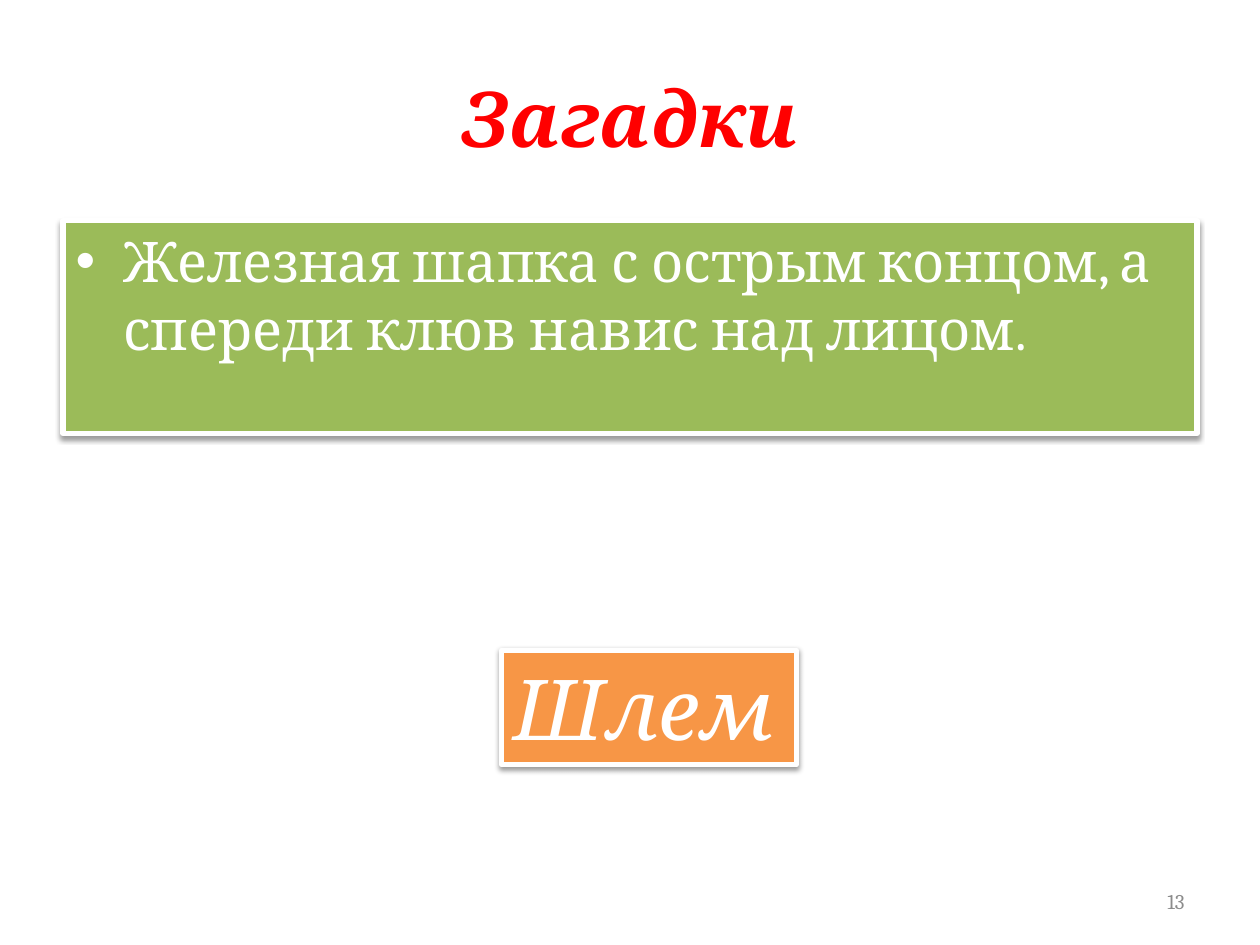
import pptx
import pptx.dml.color
import pptx.enum.text
import pptx.oxml
import pptx.oxml.ns
import pptx.util
import lxml.etree

ALIGN = pptx.enum.text.PP_ALIGN
ANCHOR = pptx.enum.text.MSO_ANCHOR
SHADOW = (
    '<a:effectLst xmlns:a="http://schemas.openxmlformats.org/drawingml/2006/main">'
    '<a:outerShdw blurRad="39370" dist="20320" dir="5400000" rotWithShape="0">'
    '<a:srgbClr val="000000"><a:alpha val="38000"/></a:srgbClr>'
    '</a:outerShdw></a:effectLst>'
)


def color(value):
    return pptx.dml.color.RGBColor.from_string(value)


class RiddleSlide:
    font_name = "Cambria"
    white = "FFFFFF"

    def __init__(self, deck):
        self.deck = deck
        self.page = deck.slides.add_slide(deck.slide_layouts[1])

    def area(self, left, top, width, height):
        across, down = self.deck.slide_width, self.deck.slide_height
        return [int(share * size) for share, size in
                zip((left, top, width, height), (across, down, across, down))]

    def place(self, box, shares):
        box.left, box.top, box.width, box.height = self.area(*shares)

    def add_text(self, box, text, size, shade, align=ALIGN.LEFT, anchor=ANCHOR.TOP,
                 bold=False, italic=False):
        frame = box.text_frame
        frame.word_wrap = True
        frame.vertical_anchor = anchor
        para = frame.paragraphs[0]
        para.alignment = align
        para.space_before = pptx.util.Pt(0)
        span = para.add_run()
        span.text = text
        span.font.name = self.font_name
        span.font.size = pptx.util.Pt(size)
        span.font.bold = bold
        span.font.italic = italic
        span.font.color.rgb = color(shade)

    def raise_card(self, box, fill):
        box.fill.solid()
        box.fill.fore_color.rgb = color(fill)
        box.line.color.rgb = color(self.white)
        box.line.width = pptx.util.Pt(3)
        box._element.spPr.append(pptx.oxml.parse_xml(SHADOW))

    def title(self, text, shares):
        box = self.page.shapes.title
        self.place(box, shares)
        self.add_text(box, text, 44, "FF0000", ALIGN.CENTER, ANCHOR.MIDDLE, True, True)

    def riddle(self, text, shares):
        box = self.page.placeholders[1]
        self.place(box, shares)
        self.raise_card(box, "9BBB59")
        properties = box.text_frame.paragraphs[0]._p.get_or_add_pPr()
        indent = pptx.util.Inches(0.38)
        properties.set("marL", str(indent))
        properties.set("indent", str(-indent))
        bullet = lxml.etree.SubElement(properties, pptx.oxml.ns.qn("a:buChar"))
        bullet.set("char", "•")
        self.add_text(box, text, 32, self.white)

    def answer(self, text, shares):
        box = self.page.shapes.add_textbox(*self.area(*shares))
        self.raise_card(box, "F79646")
        self.add_text(box, text, 48, self.white, italic=True)
        box.text_frame.auto_size = pptx.enum.text.MSO_AUTO_SIZE.SHAPE_TO_FIT_TEXT

    def number(self, text, shares):
        box = self.page.shapes.add_textbox(*self.area(*shares))
        self.add_text(box, text, 12, "8C8C8C", ALIGN.RIGHT, ANCHOR.MIDDLE)


def main():
    deck = pptx.Presentation()
    deck.slide_width = pptx.util.Inches(10)
    deck.slide_height = pptx.util.Inches(7.5)
    slide = RiddleSlide(deck)
    margin, content = 0.05, 0.9
    slide.title("Загадки", (margin, 0.04, content, 1 / 6))
    slide.riddle("Железная шапка с острым концом, а спереди клюв навис над лицом.",
                 (margin, 1.75 / 7.5, content, 1.69 / 7.5))
    slide.number("13", (0.717, 6.95 / 7.5, 0.233, 0.4 / 7.5))
    slide.answer("Шлем", (0.398, 5.16 / 7.5, 0.234, 0.91 / 7.5))
    deck.save("out.pptx")


if __name__ == "__main__":
    main()
